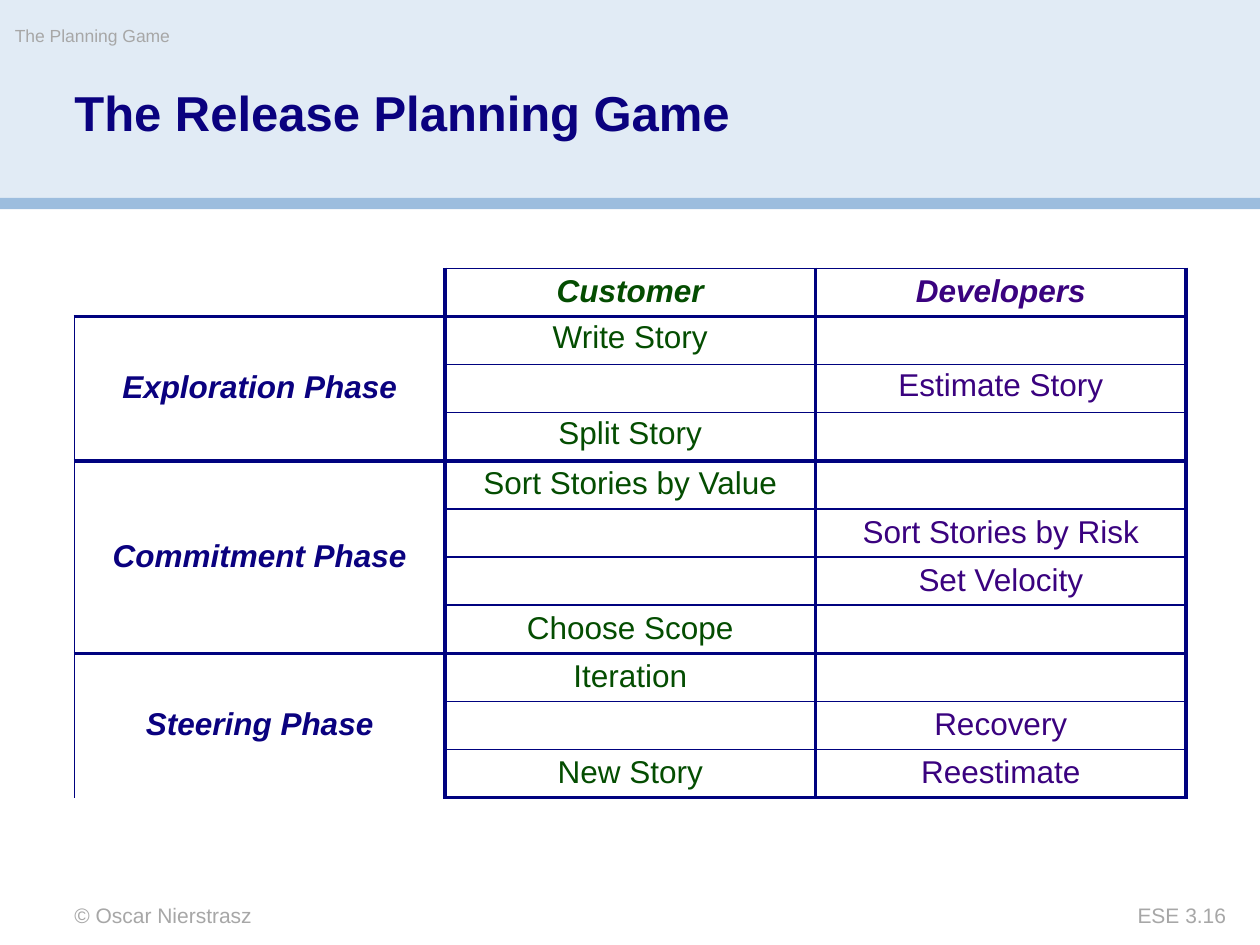
from lxml import etree
from pptx import Presentation
from pptx.dml.color import RGBColor
from pptx.enum import shapes, text
from pptx.oxml.ns import qn
from pptx.util import Cm, Pt

# Content
TITLE = "The Release Planning Game"
SECTION = "The Planning Game"
AUTHOR = "© Oscar Nierstrasz"
PAGE = "ESE 3.16"
ROLES = ("Customer", "Developers")
PHASES = [
    ("Exploration Phase", [
        ("Write Story", ""),
        ("", "Estimate Story"),
        ("Split Story", ""),
    ]),
    ("Commitment Phase", [
        ("Sort Stories by Value", ""),
        ("", "Sort Stories by Risk"),
        ("", "Set Velocity"),
        ("Choose Scope", ""),
    ]),
    ("Steering Phase", [
        ("Iteration", ""),
        ("", "Recovery"),
        ("New Story", "Reestimate"),
    ]),
]

THEME = {
    "font": "Arial",
    "navy": "0A017F", "green": "044D01", "purple": "3A027F",
    "grey": "A7A7A7", "band": "E1EBF5", "stripe": "9CBDDE", "border": "00027F",
    "title": 28, "cell": 18, "footer": 12, "section": 10,
    "thick": 2.25, "thin": 1,
}
LEFT, TABLE_TOP = 1.5, 5.41
COL_W, ROW_H, CELL_PAD = 7.47, 0.97, 0.1
ROLE_COLORS = (THEME["green"], THEME["purple"])
ALIGN, ANCHOR = text.PP_ALIGN, text.MSO_ANCHOR


def write(tf, words, size, color, bold=False, italic=False,
          align=ALIGN.LEFT, spacing=1.0):
    p = tf.paragraphs[0]
    p.alignment, p.line_spacing = align, spacing
    if not words:
        return
    r = p.add_run()
    r.text = words
    f = r.font
    f.name, f.size, f.bold, f.italic = THEME["font"], Pt(size), bold, italic
    f.color.rgb = RGBColor.from_string(color)


def clear_margins(tf):
    tf.margin_left = tf.margin_right = tf.margin_top = tf.margin_bottom = 0
    tf.word_wrap = True
    tf.vertical_anchor = ANCHOR.TOP


def add_label(slide, box, words, **style):
    tf = slide.shapes.add_textbox(*map(Cm, box)).text_frame
    clear_margins(tf)
    write(tf, words, **style)


def set_borders(cell, widths):
    """Widths in points for left, right, top, bottom; 0 draws no line."""
    tc_pr = cell._tc.get_or_add_tcPr()
    for i, (side, width) in enumerate(zip("LRTB", widths)):
        ln = etree.Element(qn(f"a:ln{side}"), w=str(int(Pt(width))))
        if width:
            fill = etree.SubElement(ln, qn("a:solidFill"))
            etree.SubElement(fill, qn("a:srgbClr"), val=THEME["border"])
        else:
            etree.SubElement(ln, qn("a:noFill"))
        tc_pr.insert(i, ln)


def fill_cell(cell, words, color, heading=False, anchor=ANCHOR.MIDDLE):
    cell.vertical_anchor = anchor
    write(cell.text_frame, words, THEME["cell"], color, bold=heading,
          italic=heading, align=ALIGN.CENTER, spacing=0.95)


def add_phase_table(slide):
    rows = 1 + sum(len(steps) for _, steps in PHASES)
    frame = slide.shapes.add_table(rows, 3, Cm(LEFT), Cm(TABLE_TOP),
                                   Cm(3 * COL_W), Cm(rows * ROW_H))
    table = frame.table
    table.first_row = table.horz_banding = False
    for col in table.columns:
        col.width = Cm(COL_W)
    for row in table.rows:
        row.height = Cm(ROW_H)

    # Headings and steps
    fill_cell(table.cell(0, 0), "", THEME["navy"])
    for c, (role, color) in enumerate(zip(ROLES, ROLE_COLORS), 1):
        fill_cell(table.cell(0, c), role, color, heading=True)
    thick_rows = {rows}
    start = 1
    for phase, steps in PHASES:
        thick_rows.add(start)
        head = table.cell(start, 0)
        head.merge(table.cell(start + len(steps) - 1, 0))
        fill_cell(head, phase, THEME["navy"], heading=True)
        anchor = ANCHOR.TOP if start == 1 else ANCHOR.MIDDLE
        for r, step in enumerate(steps, start):
            for c, (words, color) in enumerate(zip(step, ROLE_COLORS), 1):
                fill_cell(table.cell(r, c), words, color, anchor=anchor)
        start += len(steps)

    # Lines: thick around columns and phases, thin between steps
    def line_above(r, c):
        if r in thick_rows:
            return THEME["thick"]
        return THEME["thin"] if c else 0

    for r in range(rows):
        for c in range(3):
            cell = table.cell(r, c)
            cell.margin_top = cell.margin_bottom = Cm(CELL_PAD)
            cell.fill.background()
            left = THEME["thick"] if c else THEME["thin"] if r else 0
            set_borders(cell, (left, THEME["thick"],
                               line_above(r, c), line_above(r + 1, c)))


def main():
    prs = Presentation()
    prs.slide_width, prs.slide_height = Cm(25.4), Cm(19.05)
    slide = prs.slides.add_slide(prs.slide_layouts[5])

    # Header bands, placed behind the title
    bands = [(0, 4.01, THEME["band"]), (3.99, 0.23, THEME["stripe"])]
    for i, (top, height, color) in enumerate(bands):
        sp = slide.shapes.add_shape(shapes.MSO_SHAPE.RECTANGLE, 0, Cm(top),
                                    prs.slide_width, Cm(height))
        sp.shadow.inherit = False
        sp.fill.solid()
        sp.fill.fore_color.rgb = RGBColor.from_string(color)
        sp.line.fill.background()
        slide.shapes._spTree.insert(2 + i, sp._element)

    # Title
    title = slide.shapes.title
    title.left, title.top, title.width, title.height = map(
        Cm, (LEFT, 1.8, 18.39, 2.26))
    clear_margins(title.text_frame)
    title.text_frame.auto_size = text.MSO_AUTO_SIZE.NONE
    write(title.text_frame, TITLE, THEME["title"], THEME["navy"],
          bold=True, spacing=0.9)

    # Section name and footer
    add_label(slide, (0.3, 0.51, 14.99, 0.71), SECTION,
              size=THEME["section"], color=THEME["grey"])
    add_label(slide, (LEFT, 18.19, 10.59, 0.51), AUTHOR,
              size=THEME["footer"], color=THEME["grey"])
    add_label(slide, (20.96, 18.19, 3.76, 0.51), PAGE,
              size=THEME["footer"], color=THEME["grey"], align=ALIGN.RIGHT)

    add_phase_table(slide)
    prs.save("out.pptx")


if __name__ == "__main__":
    main()
